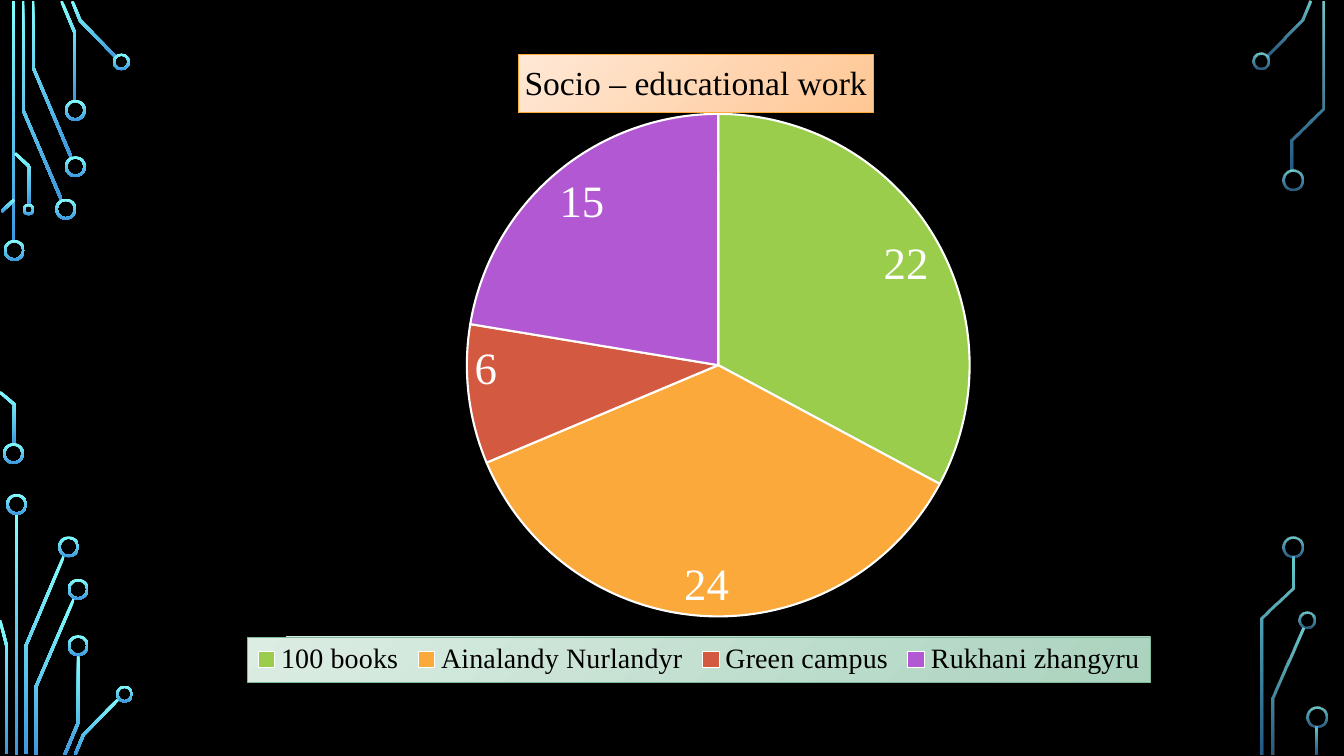
"""Build a dark slide with circuit traces and a pie chart of social and educational work."""
import math

import pptx
import pptx.chart.data
import pptx.dml.color
import pptx.dml.fill
import pptx.dml.line
import pptx.enum.chart
import pptx.enum.shapes
import pptx.oxml
import pptx.oxml.ns
import pptx.util

Cm = pptx.util.Cm
Pt = pptx.util.Pt
qn = pptx.oxml.ns.qn
FACE = "Times New Roman"
WIDTH = 0.07
BIG, MID, TINY = 0.53, 0.43, 0.3

LEFT_BARS = [(0.34, 0.03, 6.07), (0.42, 12.95, 6.07)]
LEFT_LINES = [
    [(1.55, 5.04), (0.58, 2.77), (0.58, 0.03)],
    [(1.8, 3.98), (0.83, 1.69), (0.83, 0.03)],
    [(1.89, 2.54), (1.89, 0.84), (1.55, 0.03)],
    [(2.93, 1.45), (2.02, 0.52), (1.82, 0.03)],
    [(0.04, 5.33), (0.36, 5.03)],
    [(0.36, 11.2), (0.36, 10.19), (0, 9.88)],
    [(0.74, 5.16), (0.74, 4.2), (0.38, 3.86)],
    [(0.65, 19), (0.65, 16.28), (1.61, 14.01)],
    [(0.17, 19), (0.17, 16.28), (0, 15.63)],
    [(0.9, 19.02), (0.9, 17.32), (1.87, 15.07)],
    [(1.63, 19.02), (1.97, 18.21), (1.97, 16.51)],
    [(1.89, 19.02), (2.1, 18.52), (3, 17.6)],
]
LEFT_RINGS = [
    (0.36, 6.31, BIG), (0.34, 11.43, BIG), (1.66, 5.27, BIG), (1.9, 4.2, BIG),
    (1.9, 2.78, BIG), (3.06, 1.56, MID), (0.72, 5.28, TINY), (0.42, 12.71, BIG),
    (1.73, 13.78, BIG), (1.97, 14.85, BIG), (1.97, 16.27, BIG), (3.14, 17.49, MID),
]
RIGHT_BARS = [(33.18, 18.31, 0.71)]
RIGHT_LINES = [
    [(31.93, 1.41), (32.83, 0.5), (33.03, 0.03)],
    [(32.07, 19.02), (32.07, 17.6), (32.84, 15.84)],
    [(32.56, 4.29), (32.56, 3.52), (33.34, 2.73), (33.34, 0.03)],
    [(31.81, 19.02), (31.81, 15.58), (32.6, 14.82), (32.6, 14.02)],
]
RIGHT_RINGS = [
    (31.79, 1.54, MID), (32.58, 4.53, BIG), (32.93, 15.63, MID),
    (32.59, 13.78, BIG), (33.18, 18.08, BIG),
]
SLICES = [
    ("100 books", 22, "9ACD4C"),
    ("Ainalandy Nurlandyr", 24, "FAA93A"),
    ("Green campus", 6, "D35940"),
    ("Rukhani zhangyru", 15, "B258D3"),
]


def tint(code):
    """Return the colour of a hex string."""
    return pptx.dml.color.RGBColor.from_string(code)


def style(font, size, color):
    """Set face, size and colour of a font."""
    font.name, font.size, font.bold = FACE, Pt(size), False
    font.color.rgb = tint(color)


def write(frame, words, size=24, color="000000"):
    """Put formatted text into a text frame."""
    frame.text = words
    style(frame.paragraphs[0].runs[0].font, size, color)


def blend(fill, codes, angle):
    """Give a fill a gradient of two colours."""
    fill.gradient()
    fill.gradient_angle = angle
    for stop, code in zip(fill.gradient_stops, codes):
        stop.color.rgb = tint(code)


def glow(shape, alphas):
    """Paint a circuit part from cyan down to blue."""
    shape.shadow.inherit = False
    shape.line.fill.background()
    blend(shape.fill, ("82FFFF", "3D97DE"), 270)
    for node, alpha in zip(shape.element.spPr.iter(qn("a:srgbClr")), alphas):
        if alpha < 100:
            node.makeelement(qn("a:alpha"))
            mark = pptx.oxml.parse_xml(
                f'<a:alpha {pptx.oxml.ns.nsdecls("a")} val="{alpha * 1000}"/>')
            node.append(mark)


def edges(points):
    """Return the outline of a band that follows a bent centre line."""
    norms = []
    for (ax, ay), (bx, by) in zip(points, points[1:]):
        span = math.hypot(bx - ax, by - ay)
        norms.append(((ay - by) / span, (bx - ax) / span))
    one, two = [], []
    for (x, y), (px, py), (qx, qy) in zip(points, norms[:1] + norms, norms + norms[-1:]):
        part = WIDTH / 2 / (1 + px * qx + py * qy)
        dx, dy = (px + qx) * part, (py + qy) * part
        one.append((Cm(x + dx), Cm(y + dy)))
        two.append((Cm(x - dx), Cm(y - dy)))
    return one + two[::-1]


def add_bar(shapes, x, top, height):
    """Add an upright bar centred on x."""
    kind = pptx.enum.shapes.MSO_SHAPE.RECTANGLE
    return shapes.add_shape(kind, Cm(x - WIDTH / 2), Cm(top), Cm(WIDTH), Cm(height))


def add_trace(shapes, points):
    """Add a bent trace."""
    first, *rest = edges(points)
    pen = shapes.build_freeform(*first)
    pen.add_line_segments(rest, close=True)
    return pen.convert_to_shape()


def add_ring(shapes, x, y, size):
    """Add a ring centred on a point."""
    kind = pptx.enum.shapes.MSO_SHAPE.DONUT
    ring = shapes.add_shape(kind, Cm(x - size / 2), Cm(y - size / 2), Cm(size), Cm(size))
    ring.adjustments[0] = 0.06 / size
    return ring


def add_side(shapes, bars, lines, rings, alphas=(100, 100)):
    """Add the circuit of one side of the slide."""
    parts = [add_bar(shapes, *bar) for bar in bars]
    parts += [add_trace(shapes, line) for line in lines]
    parts += [add_ring(shapes, *ring) for ring in rings]
    for part in parts:
        glow(part, alphas)


def place(node, rank, inner=False, **sides):
    """Set the manual layout of a chart part in shares of the chart."""
    for old in node.findall(qn("c:layout")):
        node.remove(old)
    body = '<c:layoutTarget val="inner"/>' if inner else ""
    body += "".join(f'<c:{side}Mode val="edge"/>' for side in "xy")
    body += "".join(f'<c:{side} val="{share}"/>' for side, share in sides.items())
    node.insert(rank, pptx.oxml.parse_xml(
        f'<c:layout {pptx.oxml.ns.nsdecls("c")}><c:manualLayout>{body}'
        "</c:manualLayout></c:layout>"))


def add_frame(node, codes, edge):
    """Give a chart part with text a shaded box."""
    props = pptx.oxml.parse_xml(f'<c:spPr {pptx.oxml.ns.nsdecls("c", "a")}/>')
    node.find(qn("c:overlay")).addnext(props)
    blend(pptx.dml.fill.FillFormat.from_fill_parent(props), codes, 315)
    line = pptx.dml.line.LineFormat(props)
    line.width = Pt(0.5)
    line.color.rgb = tint(edge)


def add_pie(shapes):
    """Add the pie chart with its title and legend."""
    enum = pptx.enum.chart
    names, values, colors = zip(*SLICES)
    data = pptx.chart.data.CategoryChartData()
    data.categories = names
    data.add_series("Series 1", values)
    chart = shapes.add_chart(enum.XL_CHART_TYPE.PIE, Cm(1.37), Cm(0.89),
                             Cm(32.49), Cm(16.31), data).chart
    style(chart.font, 10, "FFFFFF")
    plot = chart.plots[0]
    plot.vary_by_categories = True
    for rank, color in enumerate(colors):
        look = plot.series[0].points[rank].format
        look.fill.solid()
        look.fill.fore_color.rgb = tint(color)
        look.line.width = Pt(1.5)
        look.line.color.rgb = tint("FFFFFF")
    plot.has_data_labels = True
    labels = plot.data_labels
    labels.show_value = True
    labels.position = enum.XL_LABEL_POSITION.INSIDE_END
    style(labels.font, 32, "FFFFFF")
    chart.has_title = True
    write(chart.chart_title.text_frame, "Socio – educational work")
    chart.chart_title.include_in_layout = False
    chart.has_legend = True
    chart.legend.position = enum.XL_LEGEND_POSITION.BOTTOM
    chart.legend.include_in_layout = False
    style(chart.legend.font, 20, "000000")
    title, area, legend = (next(chart.element.iter(qn(f"c:{tag}")))
                           for tag in ("title", "plotArea", "legend"))
    place(title, 1, x=0.36, y=0.03)
    place(area, 0, inner=True, x=0.32, y=0.12, w=0.39, h=0.78)
    place(legend, 1, x=0.15, y=0.93, w=0.7, h=0.07)
    add_frame(title, ("FFE8D6", "FFC794"), "FAA93A")
    add_frame(legend, ("DCEDE4", "ABD3BE"), "7FB89A")


def main():
    """Build and save the slide."""
    deck = pptx.Presentation()
    deck.slide_width, deck.slide_height = Cm(33.87), Cm(19.05)
    slide = deck.slides.add_slide(deck.slide_layouts[6])
    slide.background.fill.solid()
    slide.background.fill.fore_color.rgb = tint("000000")
    add_side(slide.shapes, LEFT_BARS, LEFT_LINES, LEFT_RINGS)
    add_side(slide.shapes, RIGHT_BARS, RIGHT_LINES, RIGHT_RINGS, (80, 60))
    add_pie(slide.shapes)
    deck.save("out.pptx")


if __name__ == "__main__":
    main()
